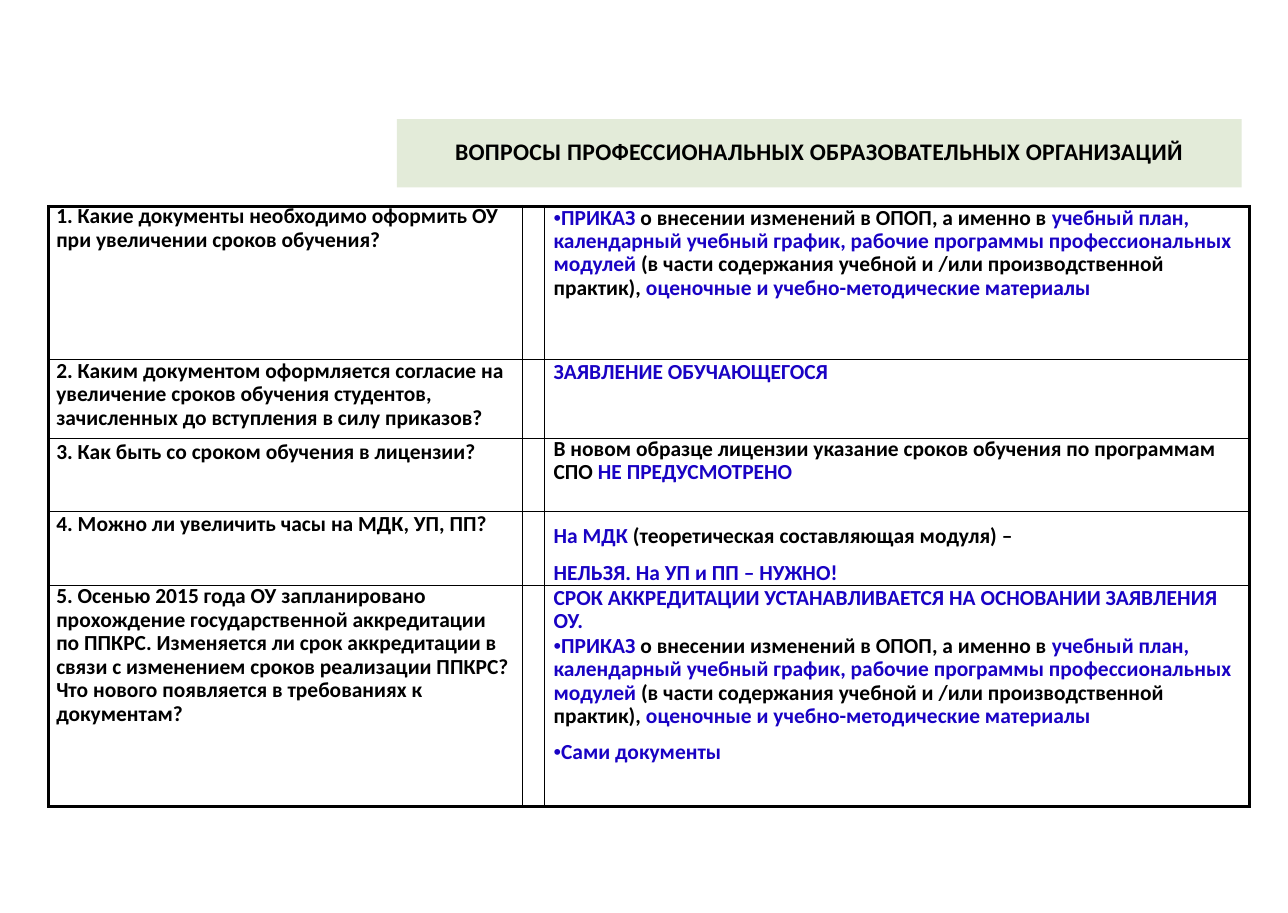
"""Build the slide of questions and answers for vocational education organisations."""
from dataclasses import dataclass
from typing import NamedTuple

from lxml.etree import SubElement
from pptx import Presentation
from pptx.dml.color import RGBColor
from pptx.enum.shapes import MSO_SHAPE as Shape
from pptx.enum.text import MSO_ANCHOR as Anchor, PP_ALIGN as Align
from pptx.oxml.ns import qn
from pptx.util import Pt

EMU_PER_PX = 9144
COLOURS = {"black": "000000", "blue": "1902C4", "banner": "E3EBD9"}
THIN, THICK = 0.84, 1.92
COLUMN_WIDTHS = (430, 20, 639)
QUESTION_INDENT, ANSWER_INDENT = 7, 8
QUESTION_RIGHT_MARGIN = 10


class Run(NamedTuple):
    text: str
    colour: str = "black"
    font: str = "Calibri"
    bold: bool = True


@dataclass(frozen=True)
class Para:
    runs: tuple[Run, ...]
    spacing: float | Pt = 1.0
    before: float = 0


@dataclass(frozen=True)
class Topic:
    height: int
    question: Para
    answer: tuple[Para, ...]
    answer_right_margin: int = 0


BULLET = Run("•", "blue", "Arial", False)
ORDER = Para((
    BULLET,
    Run("ПРИКАЗ ", "blue"),
    Run("о внесении изменений в ОПОП, а именно в "),
    Run("учебный план, календарный учебный график, рабочие программы "
        "профессиональных модулей ", "blue"),
    Run("(в части содержания учебной и /или производственной практик), "),
    Run("оценочные и учебно-методические материалы", "blue"),
), 0.9)

TOPICS = (
    Topic(139, Para((Run("1. Какие документы необходимо оформить ОУ при увеличении "
                         "сроков обучения?"),), Pt(15.2)),
          (ORDER,)),
    Topic(72, Para((Run("2. Каким документом оформляется согласие на увеличение сроков "
                        "обучения студентов, зачисленных до вступления в силу приказов?"),),
                   0.9),
          (Para((Run("ЗАЯВЛЕНИЕ ОБУЧАЮЩЕГОСЯ", "blue"),)),)),
    Topic(66, Para((Run("3. Как быть со сроком обучения в лицензии?"),)),
          (Para((Run("В новом образце лицензии указание сроков обучения по программам СПО "),
                 Run("НЕ ПРЕДУСМОТРЕНО", "blue")), Pt(15.2)),)),
    Topic(66, Para((Run("4. Можно ли увеличить часы на МДК, УП, ПП?"),)),
          (Para((Run("На МДК ", "blue"),
                 Run("(теоретическая составляющая модуля) – "),
                 Run("НЕЛЬЗЯ. На УП и ПП – НУЖНО!", "blue")), 1.43),),
          answer_right_margin=180),
    Topic(201, Para((Run("5. Осенью 2015 года ОУ запланировано прохождение государственной "
                         "аккредитации по ППКРС. Изменяется ли срок аккредитации в связи с "
                         "изменением сроков реализации ППКРС? Что нового появляется в "
                         "требованиях к документам?"),), 0.9),
          (Para((Run("СРОК АККРЕДИТАЦИИ УСТАНАВЛИВАЕТСЯ НА ОСНОВАНИИ ЗАЯВЛЕНИЯ", "blue"),)),
           Para((Run("ОУ.", "blue"),), Pt(15.1)),
           ORDER,
           Para((BULLET, Run("Сами документы", "blue")), before=7))),
)


def px(length: int) -> int:
    """Turn px into EMU."""
    return length * EMU_PER_PX


def write(paragraph, text: str, *, colour: str = "black", font: str = "Calibri",
          size: float = 14, bold: bool = True, tracking: int = 0) -> None:
    """Append text to a paragraph, tracked by hundredths of a point."""
    run = paragraph.add_run()
    run.text = text
    run.font.name, run.font.size, run.font.bold = font, Pt(size), bold
    run.font.color.rgb = RGBColor.from_string(COLOURS[colour])
    if tracking:
        run.font._element.set("spc", str(tracking))


def add_banner(slide, title: str) -> None:
    """Draw the pale band and the title over it."""
    band = slide.shapes.add_shape(Shape.RECTANGLE, px(360), px(108), px(766), px(62))
    band.shadow.inherit = False
    band.fill.solid()
    band.fill.fore_color.rgb = RGBColor.from_string(COLOURS["banner"])
    band.line.fill.background()
    frame = slide.shapes.add_textbox(px(412), px(124), px(662), px(28)).text_frame
    frame.margin_left = frame.margin_right = frame.margin_top = frame.margin_bottom = 0
    frame.vertical_anchor = Anchor.TOP
    heading = frame.paragraphs[0]
    heading.alignment = Align.CENTER
    write(heading, title, size=15.5, tracking=20)


def set_borders(cell, widths: dict[str, float]) -> None:
    """Give the cell black borders, keyed by side L, R, T and B."""
    properties = cell._tc.get_or_add_tcPr()
    for side, width in widths.items():
        border = SubElement(properties, qn(f"a:ln{side}"), w=str(int(Pt(width))))
        fill = SubElement(border, qn("a:solidFill"))
        SubElement(fill, qn("a:srgbClr"), val=COLOURS["black"])


def fill_cell(cell, paras: tuple[Para, ...], indent: int) -> None:
    """Write the paragraphs into the cell at one left indent."""
    frame = cell.text_frame
    for index, para in enumerate(paras):
        paragraph = frame.add_paragraph() if index else frame.paragraphs[0]
        paragraph.line_spacing = para.spacing
        paragraph.space_before = Pt(para.before)
        properties = paragraph._p.get_or_add_pPr()
        properties.set("marL", str(px(indent)))
        properties.set("indent", "0")
        for run in para.runs:
            write(paragraph, run.text, colour=run.colour, font=run.font, bold=run.bold)


def add_topics(slide, topics: tuple[Topic, ...]) -> None:
    """Draw the table of questions and answers."""
    last_row, last_column = len(topics) - 1, len(COLUMN_WIDTHS) - 1
    table = slide.shapes.add_table(
        len(topics), len(COLUMN_WIDTHS), px(44), px(187),
        px(sum(COLUMN_WIDTHS)), px(sum(topic.height for topic in topics))).table
    table.first_row = table.horz_banding = False
    for column, width in zip(table.columns, COLUMN_WIDTHS):
        column.width = px(width)
    for row, topic in enumerate(topics):
        table.rows[row].height = px(topic.height)
        for column in range(len(COLUMN_WIDTHS)):
            cell = table.cell(row, column)
            cell.margin_left = cell.margin_right = cell.margin_top = cell.margin_bottom = 0
            set_borders(cell, {
                "L": THICK if column == 0 else THIN,
                "R": THICK if column == last_column else THIN,
                "T": THICK if row == 0 else THIN,
                "B": THICK if row == last_row else THIN,
            })
            cell.fill.background()
        question, answer = table.cell(row, 0), table.cell(row, last_column)
        question.margin_right = px(QUESTION_RIGHT_MARGIN)
        answer.margin_right = px(topic.answer_right_margin)
        fill_cell(question, (topic.question,), QUESTION_INDENT)
        fill_cell(answer, topic.answer, ANSWER_INDENT)


def main() -> None:
    """Build and save the slide."""
    deck = Presentation()
    deck.slide_width, deck.slide_height = px(1168), px(828)
    slide = deck.slides.add_slide(deck.slide_layouts[6])
    add_banner(slide, "ВОПРОСЫ ПРОФЕССИОНАЛЬНЫХ ОБРАЗОВАТЕЛЬНЫХ ОРГАНИЗАЦИЙ")
    add_topics(slide, TOPICS)
    deck.save("out.pptx")


if __name__ == "__main__":
    main()
